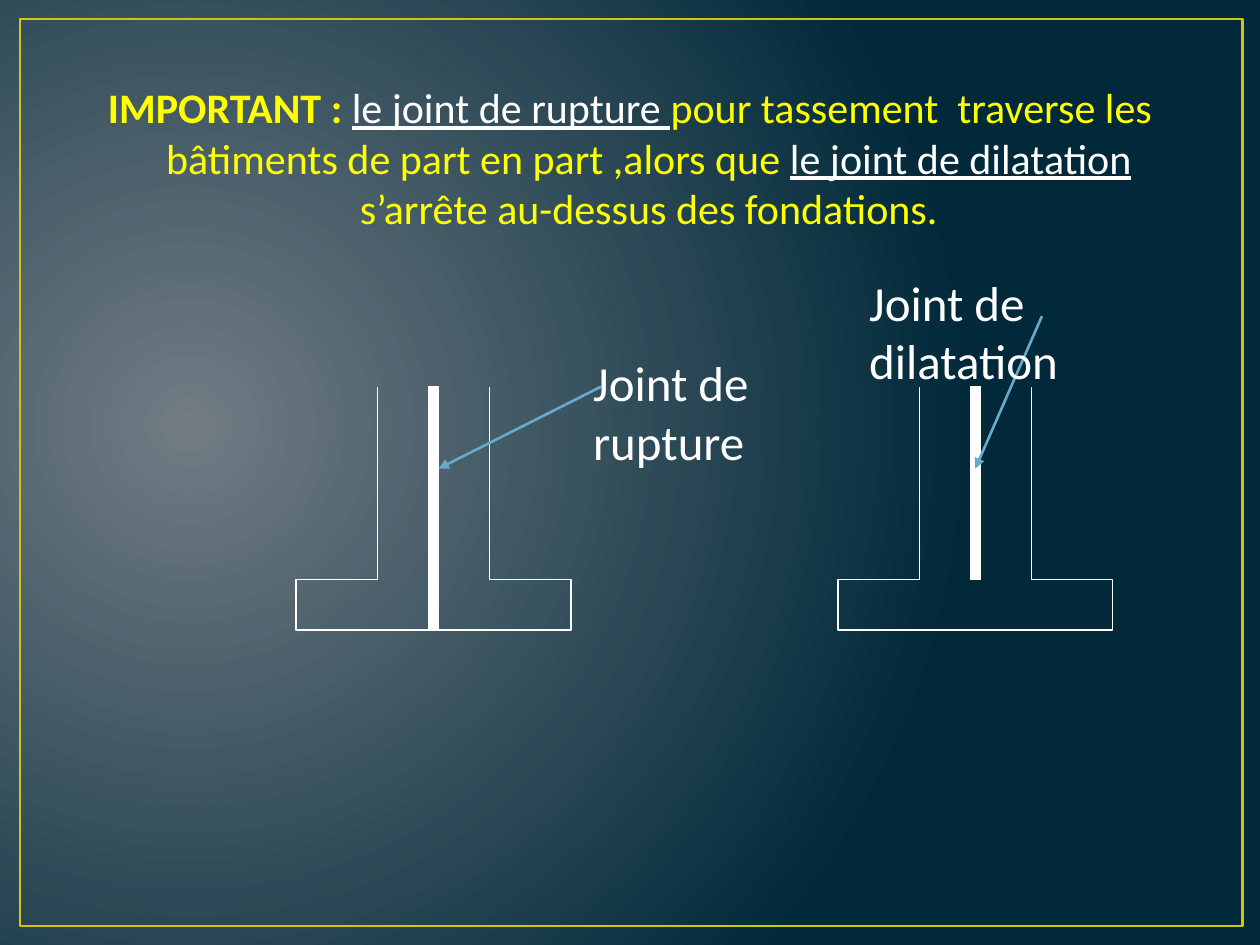
from lxml import etree
from pptx import Presentation
from pptx import util as u
from pptx.dml.color import RGBColor
from pptx.enum import shapes, text
from pptx.oxml.ns import qn

YELLOW = RGBColor(0xFF, 0xFF, 0x00)
WHITE = RGBColor(0xFF, 0xFF, 0xFF)
BORDER = RGBColor(0xCF, 0xC6, 0x0D)
ARROW = RGBColor(0x66, 0xAA, 0xCD)
GLOW = RGBColor(0x71, 0x7C, 0x84)
NIGHT = RGBColor(0x01, 0x29, 0x3A)

WALL_TOP, FOOT_TOP, FOOT_BOTTOM = 221, 331.2, 360
STEM, FOOT, JOINT = 32, 78.5, 5.8
RUPTURE_AXIS, DILATATION_AXIS = 247.7, 557.3


def paint_background(slide):
    """Fill the slide with a radial gradient centred on the left."""
    fill = slide.background.fill
    fill.gradient()
    for stop, position, colour in zip(fill.gradient_stops, (0, 1), (GLOW, NIGHT)):
        stop.position = position
        stop.color.rgb = colour
    gradient = slide.element.find(".//" + qn("a:gradFill"))
    gradient.remove(gradient.find(qn("a:lin")))
    circle = etree.SubElement(gradient, qn("a:path"), path="circle")
    etree.SubElement(circle, qn("a:fillToRect"),
                     l="15000", t="50000", r="85000", b="60000")


def add_rectangle(slide, left, top, width, height, line, weight, fill=None):
    """Add a rectangle, hollow unless a fill is given."""
    box = slide.shapes.add_shape(shapes.MSO_SHAPE.RECTANGLE, u.Pt(left),
                                 u.Pt(top), u.Pt(width), u.Pt(height))
    box.shadow.inherit = False
    box.line.color.rgb = line
    box.line.width = u.Pt(weight)
    if fill is None:
        box.fill.background()
    else:
        box.fill.solid()
        box.fill.fore_color.rgb = fill


def add_joint(slide, axis, bottom):
    """Add the white joint running down from the top of the wall."""
    add_rectangle(slide, axis - JOINT / 2, WALL_TOP, JOINT, bottom - WALL_TOP,
                  WHITE, 0.75, WHITE)


def half_profile(axis, side):
    """List the points of one wall and its footing, side being -1 or 1."""
    stem, foot = axis + side * STEM, axis + side * FOOT
    return [(stem, WALL_TOP), (stem, FOOT_TOP),
            (foot, FOOT_TOP), (foot, FOOT_BOTTOM)]


def add_outline(slide, points):
    """Draw an open white outline through the points."""
    start, *others = [(u.Pt(x), u.Pt(y)) for x, y in points]
    builder = slide.shapes.build_freeform(*start, scale=1.0)
    builder.add_line_segments(others, close=False)
    outline = builder.convert_to_shape()
    outline.shadow.inherit = False
    outline.fill.background()
    outline.line.color.rgb = WHITE
    outline.line.width = u.Pt(0.75)


def add_arrow(slide, x1, y1, x2, y2):
    """Add a straight arrow pointing at its second end."""
    arrow = slide.shapes.add_connector(shapes.MSO_CONNECTOR.STRAIGHT, u.Pt(x1),
                                       u.Pt(y1), u.Pt(x2), u.Pt(y2))
    arrow.line.color.rgb = ARROW
    arrow.line.width = u.Pt(1.5)
    etree.SubElement(arrow.line._get_or_add_ln(), qn("a:tailEnd"), type="triangle")
    etree.SubElement(arrow._element.spPr, qn("a:effectLst"))


def add_text(slide, left, top, width, height, size, runs):
    """Add a wrapped text from (words, colour, bold, underline) runs."""
    box = slide.shapes.add_textbox(u.Pt(left), u.Pt(top), u.Pt(width), u.Pt(height))
    box.text_frame.word_wrap = True
    paragraph = box.text_frame.paragraphs[0]
    for words, colour, bold, underline in runs:
        run = paragraph.add_run()
        run.text = words
        run.font.name = "Calibri"
        run.font.size = u.Pt(size)
        run.font.color.rgb = colour
        run.font.bold = bold
        run.font.underline = underline
    return paragraph


def add_rule(slide):
    """Add the statement at the top, centred with a hanging indent."""
    rule = add_text(slide, 54, 43.2, 612, 85, 24, [
        ("IMPORTANT : ", YELLOW, True, False),
        ("le joint de rupture ", WHITE, False, True),
        ("pour tassement  traverse les bâtiments de part en part ,alors que ",
         YELLOW, False, False),
        ("le joint de dilatation", WHITE, False, True),
        (" s’arrête au-dessus des fondations.", YELLOW, False, False),
    ])
    rule.alignment = text.PP_ALIGN.CENTER
    properties = rule._p.get_or_add_pPr()
    properties.set("marL", str(u.Pt(21.6)))
    properties.set("indent", str(u.Pt(-21.6)))


def add_rupture(slide):
    """Draw the two footings fully separated by the joint."""
    for side in (-1, 1):
        inner = RUPTURE_AXIS + side * JOINT / 2
        add_outline(slide, half_profile(RUPTURE_AXIS, side)
                    + [(inner, FOOT_BOTTOM), (inner, WALL_TOP)])
    add_joint(slide, RUPTURE_AXIS, FOOT_BOTTOM)
    add_arrow(slide, 343.4, WALL_TOP, RUPTURE_AXIS + JOINT / 2, 267.8)
    add_text(slide, 331.9, 198, 163.4, 75, 28,
             [("Joint de rupture", WHITE, False, False)])


def add_dilatation(slide):
    """Draw the shared footing with the joint stopping above it."""
    add_joint(slide, DILATATION_AXIS, FOOT_TOP)
    add_arrow(slide, 595.4, 180.7, DILATATION_AXIS, 267.8)
    add_text(slide, 489.6, 151.9, 154, 75, 28,
             [("Joint de dilatation", WHITE, False, False)])
    add_outline(slide, half_profile(DILATATION_AXIS, -1)
                + half_profile(DILATATION_AXIS, 1)[::-1])


def main():
    """Build the slide and save it."""
    deck = Presentation()
    deck.slide_width, deck.slide_height = u.Pt(720), u.Pt(540)
    slide = deck.slides.add_slide(deck.slide_layouts[6])
    paint_background(slide)
    add_rectangle(slide, 11.5, 10.8, 698.4, 518.4, BORDER, 1.5)
    add_rule(slide)
    add_rupture(slide)
    add_dilatation(slide)
    deck.save("out.pptx")


if __name__ == "__main__":
    main()
